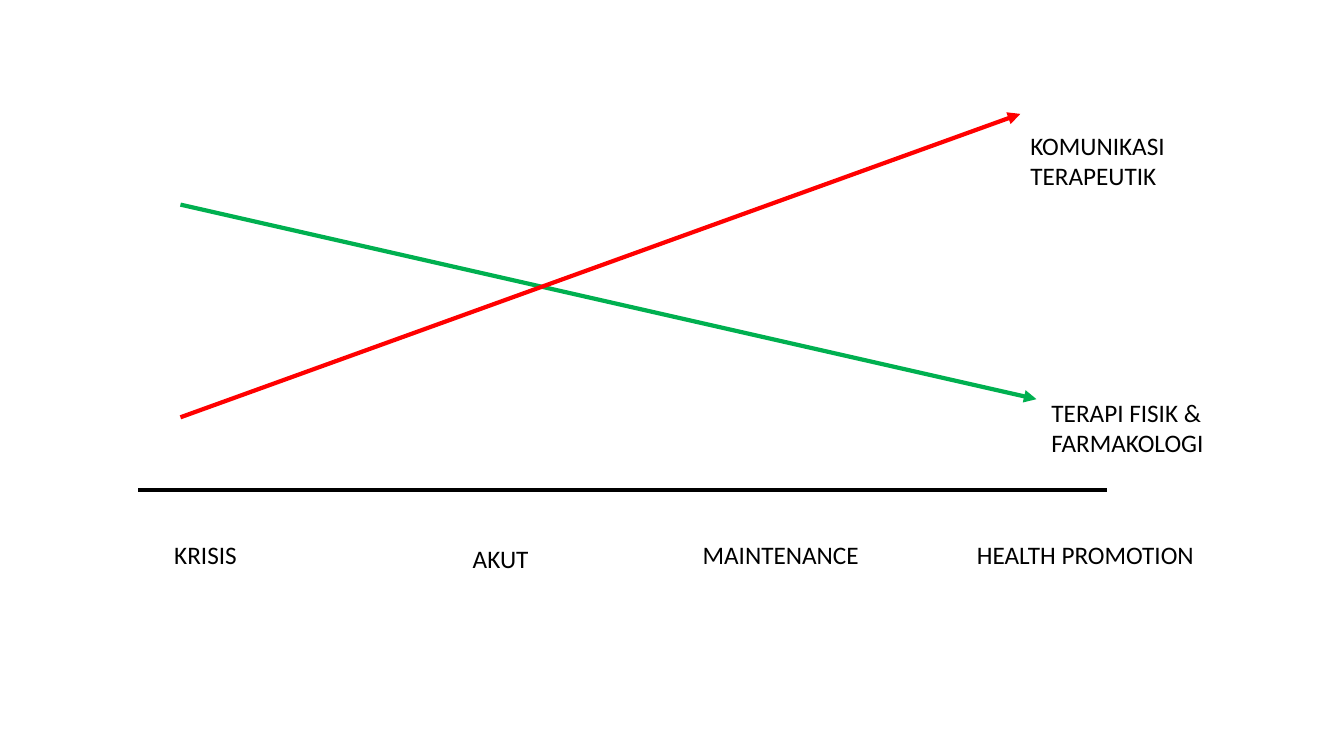
"""Build a slide that sets two kinds of therapy against the phases of care."""
from dataclasses import dataclass

from lxml import etree
from pptx import Presentation
from pptx.dml.color import RGBColor
from pptx.enum.shapes import MSO_CONNECTOR
from pptx.enum.text import MSO_AUTO_SIZE
from pptx.oxml.ns import qn
from pptx.util import Inches, Pt

STRAIGHT = MSO_CONNECTOR.STRAIGHT
FIT_SHAPE = MSO_AUTO_SIZE.SHAPE_TO_FIT_TEXT


@dataclass(frozen=True)
class Theme:
    """Colours, font and sizes of the slide."""

    ink: RGBColor = RGBColor(0x00, 0x00, 0x00)
    physical: RGBColor = RGBColor(0x00, 0xB0, 0x50)
    communication: RGBColor = RGBColor(0xFF, 0x00, 0x00)
    font: str = "Calibri"
    text_size: int = 18
    line_width: int = 3


class SlideBuilder:
    """Draws styled elements on one slide."""

    def __init__(self, slide, theme):
        """Keep the slide and its theme."""
        self.slide = slide
        self.theme = theme

    def line(self, start, end, color, arrow=False):
        """Draw a straight line, with an arrowhead at its end if asked."""
        points = [Inches(value) for value in (*start, *end)]
        connector = self.slide.shapes.add_connector(STRAIGHT, *points)
        connector.line.color.rgb = color
        connector.line.width = Pt(self.theme.line_width)
        if arrow:
            outline = connector.line._get_or_add_ln()
            etree.SubElement(outline, qn("a:tailEnd"), type="triangle")
        etree.SubElement(connector._element.spPr, qn("a:effectLst"))

    def label(self, text, left, top, width, height):
        """Write a wrapping text label."""
        box = [Inches(value) for value in (left, top, width, height)]
        frame = self.slide.shapes.add_textbox(*box).text_frame
        frame.word_wrap = True
        frame.auto_size = FIT_SHAPE
        run = frame.paragraphs[0].add_run()
        run.text = text
        run.font.name = self.theme.font
        run.font.size = Pt(self.theme.text_size)
        run.font.color.rgb = self.theme.ink


def main():
    """Create and save the presentation."""
    presentation = Presentation()
    presentation.slide_width = Inches(13.33)
    presentation.slide_height = Inches(7.5)
    slide = presentation.slides.add_slide(presentation.slide_layouts[6])
    theme = Theme()
    builder = SlideBuilder(slide, theme)

    builder.line((1.37, 4.86), (10.98, 4.86), theme.ink)
    phases = [
        ("KRISIS", 1.63, 5.3, 1.44),
        ("AKUT", 4.59, 5.34, 1.44),
        ("MAINTENANCE", 6.87, 5.3, 1.88),
        ("HEALTH PROMOTION", 9.59, 5.3, 2.49),
    ]
    for name, left, top, width in phases:
        builder.label(name, left, top, width, 0.4)

    therapies = [
        ("TERAPI FISIK & FARMAKOLOGI", theme.physical,
         (1.79, 2.03), (10.28, 3.96), (10.33, 3.89)),
        ("KOMUNIKASI TERAPEUTIK", theme.communication,
         (1.79, 4.14), (10.12, 1.13), (10.12, 1.24)),
    ]
    for name, color, start, end, corner in therapies:
        builder.line(start, end, color, arrow=True)
        builder.label(name, *corner, 1.88, 0.71)

    presentation.save("out.pptx")


if __name__ == "__main__":
    main()
